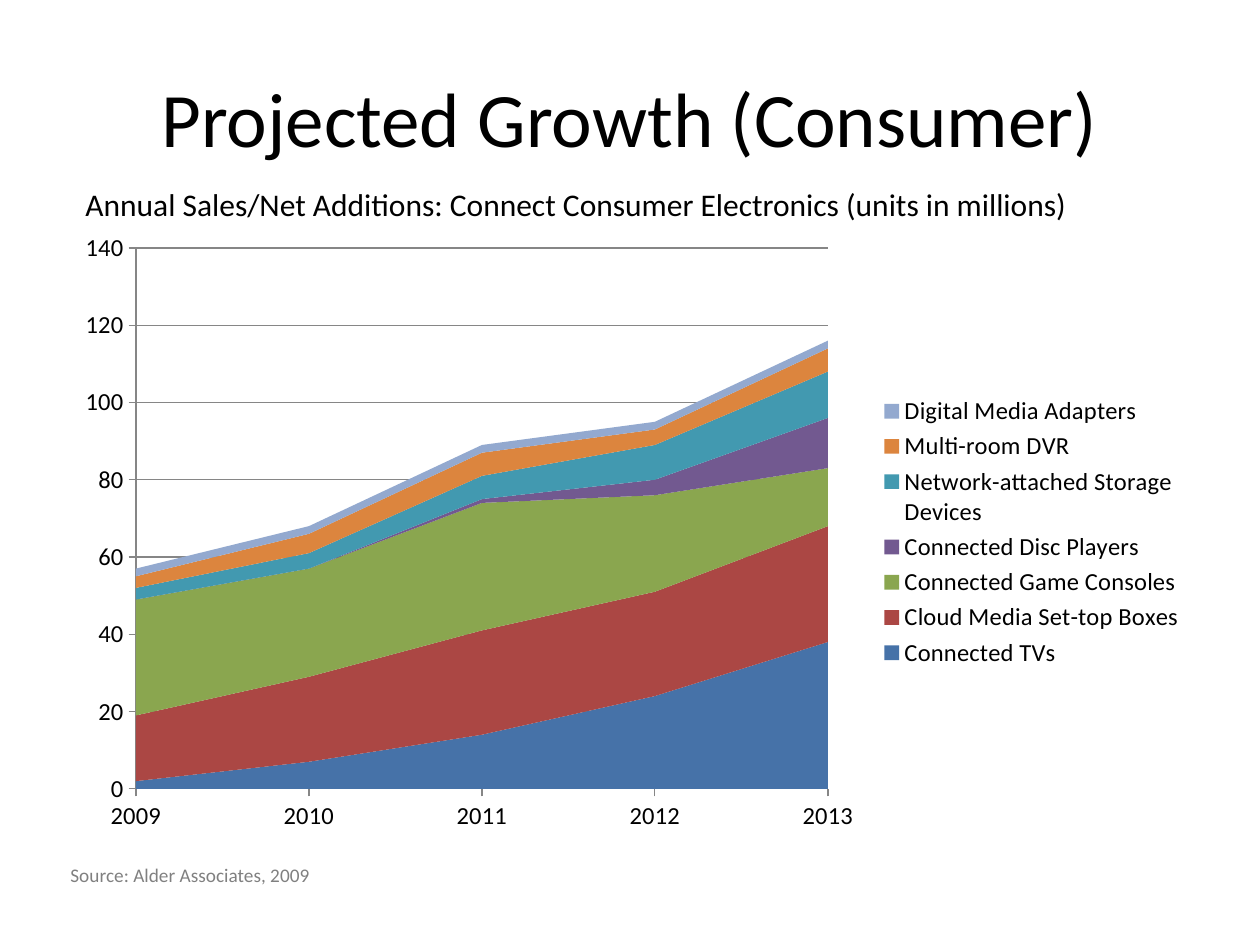
from lxml.etree import SubElement
from pptx import Presentation
from pptx.chart.data import CategoryChartData
from pptx.dml.color import RGBColor
from pptx.enum.chart import XL_CHART_TYPE, XL_LEGEND_POSITION, XL_TICK_MARK
from pptx.enum.text import MSO_ANCHOR, PP_ALIGN
from pptx.oxml.ns import qn
from pptx.util import Emu, Pt

PX = 914400 / 126
BLACK = RGBColor(0x00, 0x00, 0x00)
GRAY = RGBColor(0x80, 0x80, 0x80)
AXIS_GRAY = RGBColor(0x86, 0x86, 0x86)
BLUE = RGBColor(0x46, 0x72, 0xA8)
RED = RGBColor(0xAB, 0x47, 0x44)
GREEN = RGBColor(0x8A, 0xA6, 0x4F)
PURPLE = RGBColor(0x72, 0x59, 0x90)
TEAL = RGBColor(0x42, 0x99, 0xB0)
ORANGE = RGBColor(0xDC, 0x85, 0x3E)
PALE_BLUE = RGBColor(0x93, 0xA9, 0xCF)

YEARS = ["2009", "2010", "2011", "2012", "2013"]
DEVICES = [
    ("Connected TVs", (2, 7, 14, 24, 38), BLUE),
    ("Cloud Media Set-top Boxes", (17, 22, 27, 27, 30), RED),
    ("Connected Game Consoles", (30, 28, 33, 25, 15), GREEN),
    ("Connected Disc Players", (0, 0, 1, 4, 13), PURPLE),
    ("Network-attached Storage Devices", (3, 4, 6, 9, 12), TEAL),
    ("Multi-room DVR", (3, 5, 6, 4, 6), ORANGE),
    ("Digital Media Adapters", (2, 2, 2, 2, 2), PALE_BLUE),
]


def px(length):
    return Emu(round(length * PX))


def set_all(target, values):
    for name, value in values.items():
        setattr(target, name, value)


def set_font(font, size, color):
    set_all(font, {"name": "Calibri", "size": Pt(size)})
    font.color.rgb = color


def add_line_of_text(slide, box, wording, size, color, frame_format, align=PP_ALIGN.LEFT):
    frame = slide.shapes.add_textbox(*map(px, box)).text_frame
    set_all(frame, frame_format)
    line = frame.paragraphs[0]
    line.alignment = align
    run = line.add_run()
    run.text = wording
    set_font(run.font, size, color)


def place_plot(chart, box, inset):
    left, top, width, height = inset
    plot_area = chart.plots[0]._element.getparent()
    for old in plot_area.findall(qn("c:layout")):
        plot_area.remove(old)
    layout = SubElement(plot_area, qn("c:layout"))
    plot_area.insert(0, layout)
    manual = SubElement(layout, qn("c:manualLayout"))
    settings = {
        "layoutTarget": "inner", "xMode": "edge", "yMode": "edge",
        "x": left / box[2], "y": top / box[3],
        "w": width / box[2], "h": height / box[3],
    }
    for tag, value in settings.items():
        SubElement(manual, qn(f"c:{tag}")).set("val", str(value))


def style_axes(chart):
    years, units = chart.category_axis, chart.value_axis
    set_all(years, {"has_major_gridlines": False})
    set_all(units, {"has_major_gridlines": True, "minimum_scale": 0,
                    "maximum_scale": 140, "major_unit": 20})
    set_all(units.tick_labels, {"number_format": "0", "number_format_is_linked": False})
    for axis in (years, units):
        set_all(axis, {"major_tick_mark": XL_TICK_MARK.OUTSIDE,
                       "minor_tick_mark": XL_TICK_MARK.NONE})
    for line in (years.format.line, units.format.line, units.major_gridlines.format.line):
        line.width = Pt(0.75)
        line.color.rgb = AXIS_GRAY


def add_growth_chart(slide, box):
    sales = CategoryChartData(number_format="0")
    sales.categories = YEARS
    for device, units, _ in DEVICES:
        sales.add_series(device, units)
    chart = slide.shapes.add_chart(
        XL_CHART_TYPE.AREA_STACKED, *map(px, box), sales).chart
    set_all(chart, {"has_title": False, "has_legend": True})
    set_all(chart.legend, {"position": XL_LEGEND_POSITION.RIGHT, "include_in_layout": False})
    set_font(chart.font, 14, BLACK)
    chart.plots[0].vary_by_categories = False
    for series, (_, _, color) in zip(chart.plots[0].series, DEVICES):
        series.format.fill.solid()
        series.format.fill.fore_color.rgb = color
        series.format.line.fill.background()
    style_axes(chart)
    place_plot(chart, box, (73, 28, 692, 541))


def add_growth_slide(deck, box):
    left, top, width, height = box
    slide = deck.slides.add_slide(deck.slide_layouts[6])
    add_line_of_text(slide, (left + 63, top + 38, width - 126, 157),
                     "Projected Growth (Consumer)", 44, BLACK,
                     {"word_wrap": True, "vertical_anchor": MSO_ANCHOR.MIDDLE},
                     PP_ALIGN.CENTER)
    add_growth_chart(slide, (left + 63, top + 220, width - 126, 624))
    add_line_of_text(slide, (left + 73, top + 179, 1087, 50),
                     "Annual Sales/Net Additions: Connect Consumer Electronics (units in millions)",
                     18, BLACK, {"word_wrap": False})
    add_line_of_text(slide, (left + 58, top + height - 88, 285, 37),
                     "Source: Alder Associates, 2009", 11, GRAY, {"word_wrap": False})


def main():
    deck = Presentation()
    set_all(deck, {"slide_width": px(1260), "slide_height": px(945)})
    add_growth_slide(deck, (0, 0, 1260, 945))
    deck.save("out.pptx")


if __name__ == "__main__":
    main()
